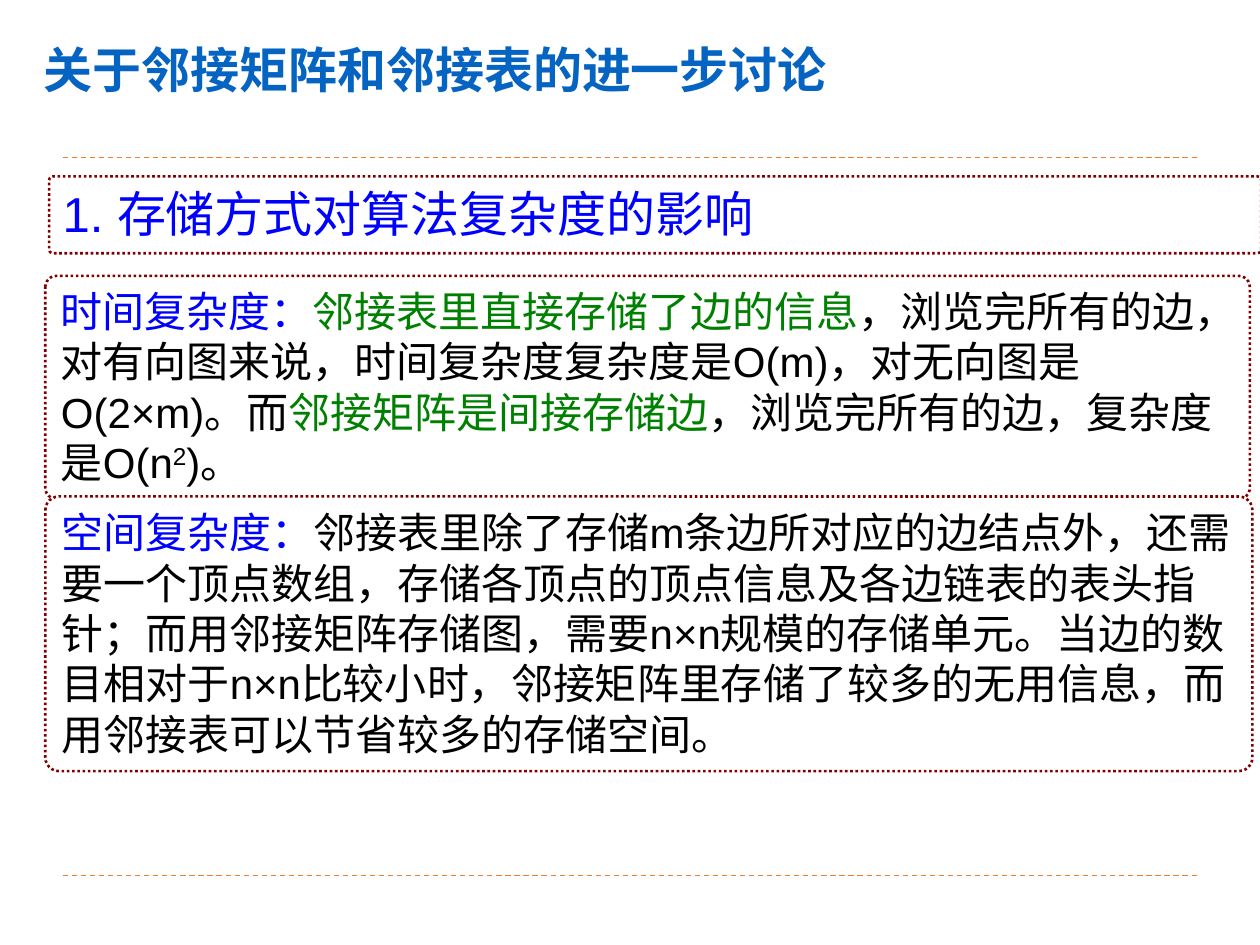
"""Build a slide on how graph storage affects algorithm complexity."""
import pptx
import pptx.util
import pptx.dml.color
import pptx.enum.dml
import pptx.enum.shapes
import pptx.enum.text
import lxml.etree
from pptx.oxml.ns import qn

Inches = pptx.util.Inches
Pt = pptx.util.Pt
RGBColor = pptx.dml.color.RGBColor
Dash = pptx.enum.dml.MSO_LINE
Anchor = pptx.enum.text.MSO_ANCHOR

WHITE = RGBColor(0xFF, 0xFF, 0xFF)
BLACK = RGBColor(0, 0, 0)
BLUE = RGBColor(0, 0, 0xFF)
GREEN = RGBColor(0, 0x80, 0)
MAROON = RGBColor(0x80, 0, 0)
ORANGE = RGBColor(0xED, 0x7D, 0x31)
TITLE_BLUE = RGBColor(0x05, 0x63, 0xC1)

TITLE = "关于邻接矩阵和邻接表的进一步讨论"
RULE_HEIGHTS = (6.95, 1.25)
PANELS = [
    ((0.39, 1.4, 9.62, 0.61), 28, [("1. 存储方式对算法复杂度的影响", BLUE)]),
    ((0.36, 2.19, 9.56, 1.77), 24, [
        ("时间复杂度：", BLUE),
        ("邻接表里直接存储了边的信息", GREEN),
        ("，浏览完所有的边，对有向图来说，时间复杂度复杂度是O(m)，对无向图是O(2×m)。而", BLACK),
        ("邻接矩阵是间接存储边", GREEN),
        ("，浏览完所有的边，复杂度是O(n", BLACK),
        ("2", BLACK, 30),
        (")。", BLACK),
    ]),
    ((0.36, 3.94, 9.58, 2.18), 24, [
        ("空间复杂度：", BLUE),
        ("邻接表里除了存储m条边所对应的边结点外，还需要一个顶点数组，"
         "存储各顶点的顶点信息及各边链表的表头指针；而用邻接矩阵存储图，"
         "需要n×n规模的存储单元。当边的数目相对于n×n比较小时，"
         "邻接矩阵里存储了较多的无用信息，而用邻接表可以节省较多的存储空间。", BLACK),
    ]),
]


def write_text(box, spans, size, font="Arial", bold=False, anchor=Anchor.TOP,
               line_spacing=None, space_after=None):
    """Fill a box with one paragraph of (text, colour, raise) spans."""
    frame = box.text_frame
    frame.word_wrap = True
    frame.vertical_anchor = anchor
    para = frame.paragraphs[0]
    para.alignment = pptx.enum.text.PP_ALIGN.LEFT
    para.line_spacing = line_spacing
    para.space_after = space_after
    for text, color, *raised in spans:
        span = para.add_run()
        span.text = text
        span.font.name = font
        span.font.size = Pt(size)
        span.font.bold = bold
        span.font.color.rgb = color
        if raised:
            span.font._element.set("baseline", str(raised[0] * 1000))


def style_line(line, color, width, dash):
    """Set the colour, width and dash of a line."""
    line.color.rgb = color
    line.width = Pt(width)
    line.dash_style = dash


def add_rule(page, height):
    """Draw a dashed rule across the page."""
    rule = page.shapes.add_connector(
        pptx.enum.shapes.MSO_CONNECTOR.STRAIGHT,
        Inches(0.5), Inches(height), Inches(9.5), Inches(height))
    style_line(rule.line, ORANGE, 0.75, Dash.DASH)
    lxml.etree.SubElement(rule._element.spPr, qn("a:effectLst"))


def add_panel(page, place, size, spans):
    """Draw a dotted rounded panel with its text."""
    panel = page.shapes.add_shape(
        pptx.enum.shapes.MSO_SHAPE.ROUNDED_RECTANGLE, *map(Inches, place))
    panel.adjustments[0] = 0.05
    panel.shadow.inherit = False
    panel.fill.solid()
    panel.fill.fore_color.rgb = WHITE
    style_line(panel.line, MAROON, 1.5, Dash.ROUND_DOT)
    write_text(panel, spans, size, space_after=Pt(size / 4))


def main():
    """Assemble and save the deck."""
    deck = pptx.Presentation()
    deck.slide_width, deck.slide_height = Inches(10), Inches(7.5)
    page = deck.slides.add_slide(deck.slide_layouts[6])
    for height in RULE_HEIGHTS:
        add_rule(page, height)
    for place, size, spans in PANELS:
        add_panel(page, place, size, spans)
    title = page.shapes.add_textbox(*map(Inches, (0.25, -0.15, 8.63, 1.45)))
    write_text(title, [(TITLE, TITLE_BLUE)], 28, font="Times New Roman",
               bold=True, anchor=Anchor.MIDDLE, line_spacing=0.9)
    deck.save("out.pptx")


if __name__ == "__main__":
    main()
